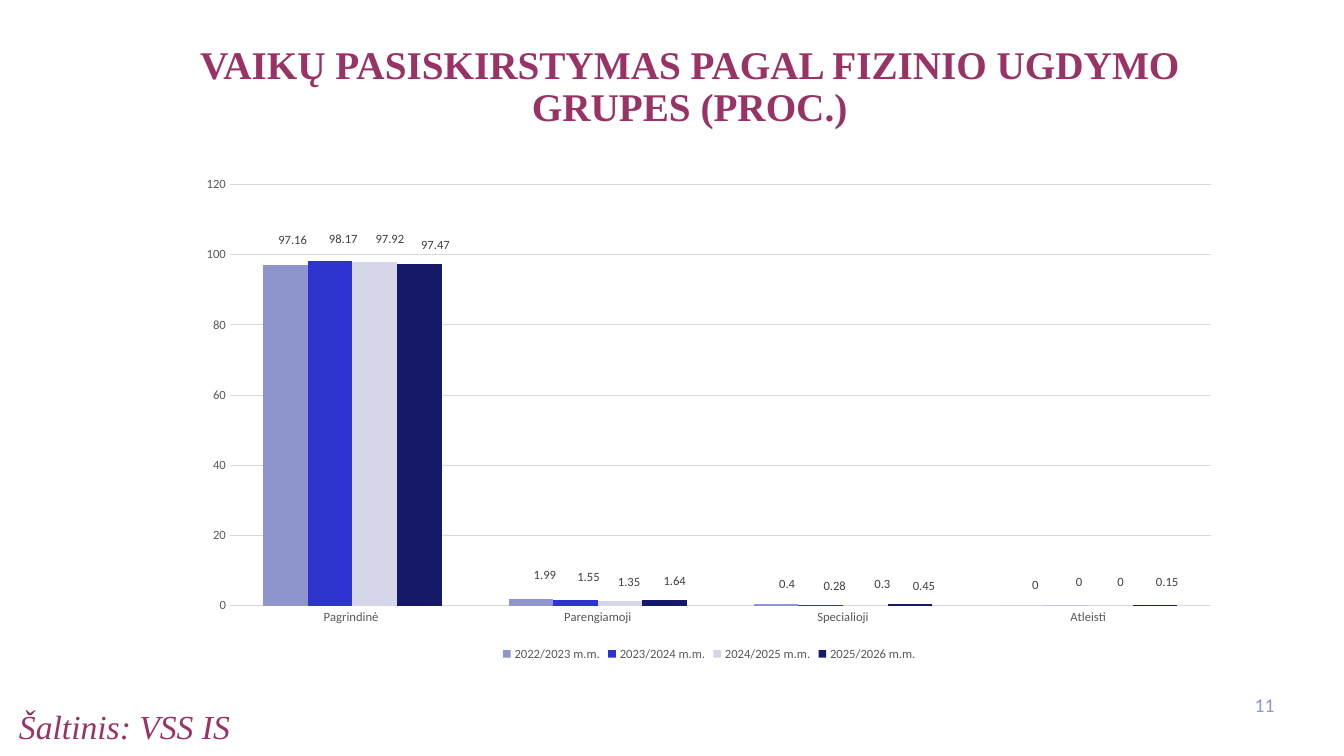
from dataclasses import dataclass

from lxml.etree import SubElement
from pptx import Presentation
from pptx.chart.data import CategoryChartData
from pptx.dml.color import RGBColor
from pptx.enum.chart import XL_CHART_TYPE, XL_LABEL_POSITION, XL_LEGEND_POSITION, XL_TICK_MARK
from pptx.enum.text import MSO_ANCHOR, MSO_AUTO_SIZE, PP_ALIGN
from pptx.oxml.ns import qn
from pptx.util import Emu, Pt

EMU_PER_PX = 9144
COLORS = {
    "plum": "993366", "number": "8E96CD", "axis": "595959", "label": "404040",
    "grid": "D9D9D9", "black": "000000", "periwinkle": "8D95CC", "blue": "2E34D0",
    "mist": "D5D7E8", "navy": "151967",
}


@dataclass(frozen=True)
class Box:
    """A rectangle in px, 100 px to the inch."""
    left: int
    top: int
    width: int
    height: int

    def emu(self) -> list[Emu]:
        """Return the rectangle in EMU."""
        return [Emu(side * EMU_PER_PX) for side in (self.left, self.top, self.width, self.height)]


@dataclass(frozen=True)
class Caption:
    """One styled line of text."""
    text: str
    box: Box
    size: int
    color: str
    font: str = "Times New Roman"
    bold: bool = False
    italic: bool = False
    align: PP_ALIGN = PP_ALIGN.LEFT
    anchor: MSO_ANCHOR = MSO_ANCHOR.TOP
    spacing: float = 1.0


@dataclass(frozen=True)
class YearSeries:
    """A school year's values, bar colour and label shifts in px."""
    name: str
    color: str
    values: tuple[float, ...]
    shifts: tuple[tuple[int, int], ...]


TITLE = Caption("VAIKŲ PASISKIRSTYMAS PAGAL FIZINIO UGDYMO GRUPES (PROC.)",
                Box(109, 40, 1150, 113), 28, "plum", bold=True,
                align=PP_ALIGN.CENTER, spacing=0.9)
CAPTIONS = [
    Caption("Šaltinis: VSS IS", Box(9, 695, 630, 38), 24, "plum", italic=True),
    Caption("11", Box(1222, 679, 52, 40), 14, "number", "Calibri",
            align=PP_ALIGN.RIGHT, anchor=MSO_ANCHOR.MIDDLE),
]
CHART_BOX = Box(185, 166, 1037, 494)
PLOT_BOX = Box(43, 17, 973, 418)
GROUPS = ["Pagrindinė ", "Parengiamoji", "Specialioji", "Atleisti"]
YEARS = [
    YearSeries("2022/2023 m.m.", "periwinkle", (97.16, 1.99, 0.4, 0),
               ((7, -13), (14, -12), (11, -9), (14, -9))),
    YearSeries("2023/2024 m.m.", "blue", (98.17, 1.55, 0.28, 0),
               ((13, -10), (13, -12), (14, -7), (13, -12))),
    YearSeries("2024/2025 m.m.", "mist", (97.92, 1.35, 0.3, 0),
               ((15, -11), (9, -7), (17, -9), (10, -12))),
    YearSeries("2025/2026 m.m.", "navy", (97.47, 1.64, 0.45, 0.15),
               ((16, -7), (10, -7), (14, -7), (12, -12))),
]


def style_font(font, size: int, color: str, name: str = "Calibri") -> None:
    """Set size, colour and typeface."""
    font.size = Pt(size)
    font.name = name
    font.color.rgb = RGBColor.from_string(COLORS[color])


def write_caption(shape, caption: Caption) -> None:
    """Place a text shape and fill it with its caption."""
    shape.left, shape.top, shape.width, shape.height = caption.box.emu()
    frame = shape.text_frame
    frame.word_wrap = True
    frame.auto_size = MSO_AUTO_SIZE.NONE
    frame.vertical_anchor = caption.anchor
    para = frame.paragraphs[0]
    para.alignment = caption.align
    para.line_spacing = caption.spacing
    span = para.add_run()
    span.text = caption.text
    style_font(span.font, caption.size, caption.color, caption.font)
    span.font.bold = caption.bold
    span.font.italic = caption.italic


def add_layout(parent, index: int, settings: dict[str, object]) -> None:
    """Put a manual layout into a chart element at the given child index."""
    for old in parent.findall(qn("c:layout")):
        parent.remove(old)
    layout = SubElement(parent, qn("c:layout"))
    manual = SubElement(layout, qn("c:manualLayout"))
    for tag, value in settings.items():
        SubElement(manual, qn(f"c:{tag}")).set("val", str(value))
    parent.insert(index, layout)


def style_axis(axis) -> None:
    """Hide the axis line and ticks and style its labels."""
    axis.major_tick_mark = axis.minor_tick_mark = XL_TICK_MARK.NONE
    axis.format.line.fill.background()
    style_font(axis.tick_labels.font, 9, "axis")


def style_series(series, year: YearSeries) -> None:
    """Colour the bars and place their value labels without leader lines."""
    series.format.fill.solid()
    series.format.fill.fore_color.rgb = RGBColor.from_string(COLORS[year.color])
    series.invert_if_negative = False
    labels = series.data_labels
    labels.show_value = True
    labels.position = XL_LABEL_POSITION.OUTSIDE_END
    style_font(labels.font, 9, "label")
    for index in range(len(year.shifts)):
        label = series.points[index].data_label
        style_font(label.font, 9, "label")
        label.position = XL_LABEL_POSITION.OUTSIDE_END
    for element, (right, down) in zip(series._element.iter(qn("c:dLbl")), year.shifts):
        add_layout(element, 1, {"x": right / CHART_BOX.width, "y": down / CHART_BOX.height})
    for leader in series._element.iter(qn("c:showLeaderLines")):
        leader.set("val", "0")


def add_group_chart(page) -> None:
    """Draw the clustered columns of groups by school year."""
    data = CategoryChartData()
    data.categories = GROUPS
    for year in YEARS:
        data.add_series(year.name, year.values)
    chart = page.shapes.add_chart(XL_CHART_TYPE.COLUMN_CLUSTERED, *CHART_BOX.emu(), data).chart
    style_font(chart.font, 10, "black")
    chart.has_title = False
    chart.has_legend = True
    chart.legend.position = XL_LEGEND_POSITION.BOTTOM
    chart.legend.include_in_layout = False
    style_font(chart.legend.font, 9, "axis")
    style_axis(chart.category_axis)
    scale = chart.value_axis
    style_axis(scale)
    scale.minimum_scale, scale.maximum_scale, scale.major_unit = 0, 120, 20
    grid = scale.major_gridlines.format.line
    grid.width = Pt(0.75)
    grid.color.rgb = RGBColor.from_string(COLORS["grid"])
    plot = chart.plots[0]
    plot.gap_width, plot.overlap, plot.vary_by_categories = 150, 0, False
    for series, year in zip(plot.series, YEARS):
        style_series(series, year)
    area = next(chart._chartSpace.iter(qn("c:plotArea")))
    add_layout(area, 0, {
        "layoutTarget": "inner", "xMode": "edge", "yMode": "edge",
        "x": PLOT_BOX.left / CHART_BOX.width, "y": PLOT_BOX.top / CHART_BOX.height,
        "w": PLOT_BOX.width / CHART_BOX.width, "h": PLOT_BOX.height / CHART_BOX.height,
    })


def main() -> None:
    """Build and save the deck."""
    deck = Presentation()
    deck.slide_width, deck.slide_height = Emu(1333 * EMU_PER_PX), Emu(750 * EMU_PER_PX)
    page = deck.slides.add_slide(deck.slide_layouts[5])
    write_caption(page.shapes.title, TITLE)
    for caption in CAPTIONS:
        write_caption(page.shapes.add_textbox(*caption.box.emu()), caption)
    add_group_chart(page)
    deck.save("out.pptx")


if __name__ == "__main__":
    main()
